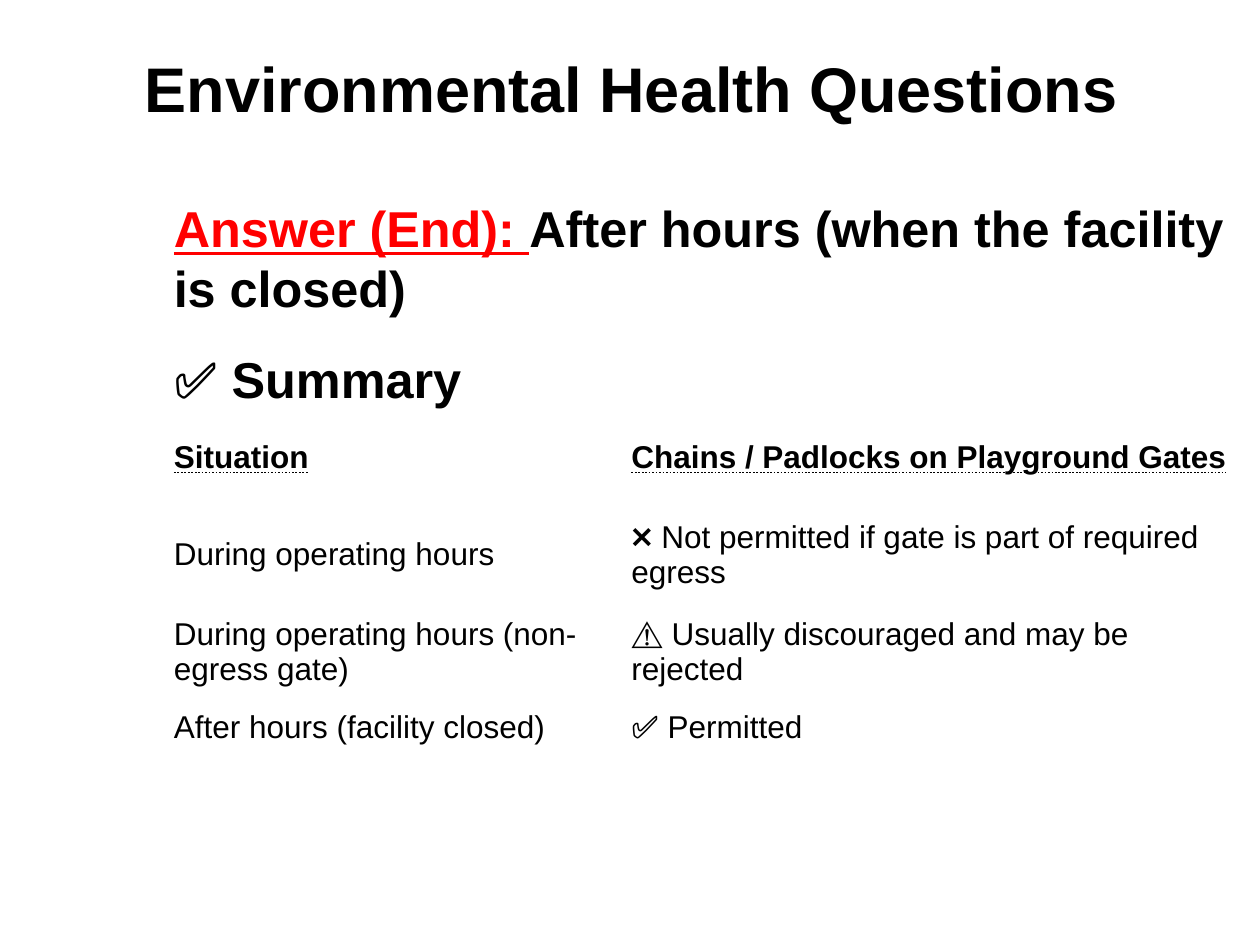
from dataclasses import dataclass

from pptx import Presentation
from pptx.dml.color import RGBColor
from pptx.enum.text import MSO_ANCHOR, MSO_AUTO_SIZE, MSO_UNDERLINE, PP_ALIGN
from pptx.util import Pt

BLACK = RGBColor(0, 0, 0)
RED = RGBColor(255, 0, 0)
WHITE = RGBColor(255, 255, 255)
FONT_NAME = "Arial"
COLUMN_WIDTHS = (261.4, 355)
ROW_HEIGHTS = (55.4, 55.4, 55.4, 31.7)
CONTENT_LEFT = 92.2
CONTENT_WIDTH = sum(COLUMN_WIDTHS)


@dataclass(frozen=True)
class Span:
    text: str
    color: RGBColor = BLACK
    bold: bool = True
    underline: bool = False


@dataclass(frozen=True)
class Situation:
    name: str
    rule: str


HEADINGS = Situation("Situation", "Chains / Padlocks on Playground Gates")
SITUATIONS = (
    Situation("During operating hours", "❌ Not permitted if gate is part of required egress"),
    Situation("During operating hours (non-egress gate)", "⚠️ Usually discouraged and may be rejected"),
    Situation("After hours (facility closed)", "✅ Permitted"),
)
ANSWER = (
    Span("Answer (End): ", color=RED, underline=True),
    Span("After hours (when the facility is closed)"),
)
SUMMARY = (Span("✅ ", bold=False), Span("Summary"))


def format_font(font, size: float, bold: bool | None = None, color: RGBColor | None = BLACK) -> None:
    font.name = FONT_NAME
    font.size = Pt(size)
    font.bold = bold
    if color is not None:
        font.color.rgb = color


def add_title(page, text: str) -> None:
    title = page.shapes.title
    title.left, title.top, title.width, title.height = Pt(75.6), Pt(5), Pt(632.2), Pt(90)
    title.text = text
    frame = title.text_frame
    frame.word_wrap = True
    frame.auto_size = MSO_AUTO_SIZE.NONE
    frame.vertical_anchor = MSO_ANCHOR.MIDDLE
    para = frame.paragraphs[0]
    para.alignment = PP_ALIGN.LEFT
    format_font(para.font, 36, bold=True)


def fill_paragraph(para, spans: tuple[Span, ...], space_before: float = 0) -> None:
    para.space_before = Pt(space_before)
    para.line_spacing = Pt(34.3)
    format_font(para.font, 28.8, color=None)
    for span in spans:
        run = para.add_run()
        run.text = span.text
        run.font.bold = span.bold
        run.font.underline = span.underline
        run.font.color.rgb = span.color


def add_answer(page) -> None:
    box = page.shapes.add_textbox(Pt(CONTENT_LEFT), Pt(109.5), Pt(CONTENT_WIDTH), Pt(425.5))
    frame = box.text_frame
    frame.word_wrap = True
    fill_paragraph(frame.paragraphs[0], ANSWER)
    fill_paragraph(frame.add_paragraph(), SUMMARY, space_before=17.7)


def fill_cell(cell, text: str, heading: bool) -> None:
    cell.text = text
    cell.fill.background()
    cell.vertical_anchor = MSO_ANCHOR.MIDDLE
    font = cell.text_frame.paragraphs[0].font
    format_font(font, 18, bold=heading)
    font.underline = MSO_UNDERLINE.DOTTED_LINE if heading else False


def add_situations(page) -> None:
    records = (HEADINGS, *SITUATIONS)
    table = page.shapes.add_table(
        len(records), len(COLUMN_WIDTHS), Pt(CONTENT_LEFT), Pt(234), Pt(CONTENT_WIDTH), Pt(sum(ROW_HEIGHTS))
    ).table
    table.first_row = False
    table.horz_banding = False
    for column, width in zip(table.columns, COLUMN_WIDTHS):
        column.width = Pt(width)
    for row, height, record in zip(table.rows, ROW_HEIGHTS, records):
        row.height = Pt(height)
        for cell, text in zip(row.cells, (record.name, record.rule)):
            fill_cell(cell, text, heading=record is HEADINGS)


def main() -> None:
    deck = Presentation()
    deck.slide_width, deck.slide_height = Pt(720), Pt(540)
    page = deck.slides.add_slide(deck.slide_layouts.get_by_name("Title Only"))
    page.background.fill.solid()
    page.background.fill.fore_color.rgb = WHITE
    add_title(page, "Environmental Health Questions")
    add_answer(page)
    add_situations(page)
    deck.save("out.pptx")


if __name__ == "__main__":
    main()
